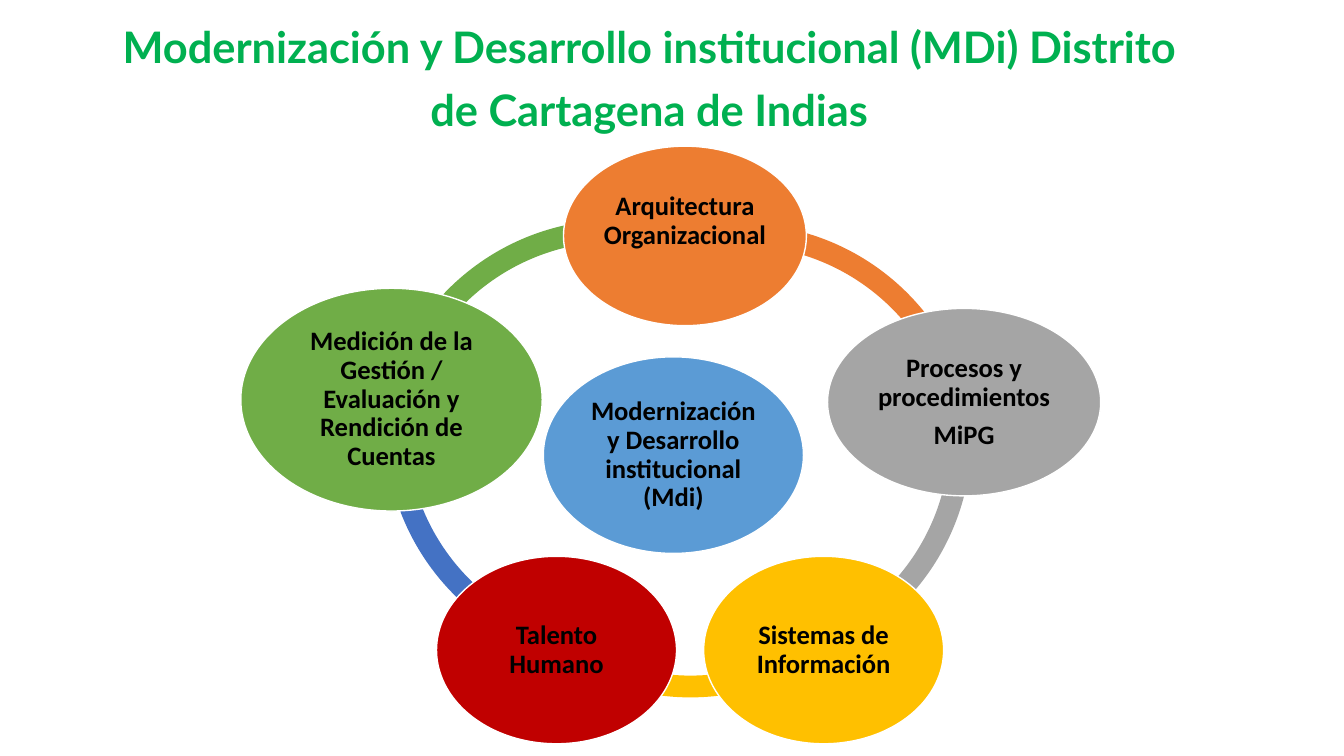
from pptx import Presentation
from pptx.dml.color import RGBColor
from pptx.enum.shapes import MSO_SHAPE
from pptx.enum.text import MSO_ANCHOR, PP_ALIGN
from pptx.util import Pt

WHITE = RGBColor(0xFF, 0xFF, 0xFF)
BLACK = RGBColor(0, 0, 0)
LEAF = RGBColor(0x00, 0xB0, 0x50)
GREEN = RGBColor(0x70, 0xAD, 0x47)
NAVY = RGBColor(0x44, 0x72, 0xC4)
BLUE = RGBColor(0x5B, 0x9B, 0xD5)
GOLD = RGBColor(0xFF, 0xC0, 0x00)
GRAY = RGBColor(0xA5, 0xA5, 0xA5)
ORANGE = RGBColor(0xED, 0x7D, 0x31)
RED = RGBColor(0xC0, 0x00, 0x00)

ARC_SIZE = 338.4
ARC_WIDTH = 0.046
SIZE = 19
LINE = 20.5

# Offset in the ring box, start and end angle (1.0 = 5/3 degree), colour
ARCS = [
    (98.7, 53, 116.59, 172.33, GREEN),
    (103, 32.1, 63.74, 112.19, NAVY),
    (152, 55.8, 32.89, 75.12, GOLD),
    (183.7, 38.6, 210.97, 40.45, GRAY),
    (187.3, 55.8, 153.74, 207.29, ORANGE),
]

# Offset in the ring box, size, colour, text, lift of the text
NODES = [
    (216.1, 150.9, 185.8, 140.4, BLUE,
     "Modernización y Desarrollo institucional (Mdi)", 0),
    (230.5, 0.4, 173.5, 128.2, ORANGE, "Arquitectura Organizacional", LINE),
    (419.1, 116.3, 195.1, 133.9, GRAY, "Procesos y procedimientos\nMiPG", 0),
    (330.6, 293.4, 171.4, 133.9, GOLD, "Sistemas de Información", 0),
    (139.8, 293.4, 171.4, 133.9, RED, "Talento Humano", 0),
    (0, 101.9, 215.3, 159.1, GREEN,
     "Medición de la Gestión / Evaluación y Rendición de Cuentas", 0),
]


def style(frame, font, size, color, spacing, after=0):
    frame.word_wrap = True
    for para in frame.paragraphs:
        para.alignment = PP_ALIGN.CENTER
        para.line_spacing = spacing
        para.space_after = Pt(after)
        for run in para.runs:
            run.font.name = font
            run.font.size = Pt(size)
            run.font.bold = True
            run.font.color.rgb = color


def add_title(slide, left, top, width, height):
    box = slide.shapes.add_textbox(Pt(left), Pt(top), Pt(width), Pt(height))
    frame = box.text_frame
    frame.text = ("Modernización y Desarrollo institucional (MDi) Distrito "
                  "de Cartagena de Indias")
    style(frame, "Lato", 31, LEAF, 1.2)


def add_solid(slide, kind, left, top, width, height, color):
    shape = slide.shapes.add_shape(kind, Pt(left), Pt(top), Pt(width), Pt(height))
    shape.shadow.inherit = False
    shape.fill.solid()
    shape.fill.fore_color.rgb = color
    shape.line.fill.background()
    return shape


def add_node(slide, left, top, width, height, color, text, lift):
    """Draw one oval; lift raises its text by that much room below."""
    oval = add_solid(slide, MSO_SHAPE.OVAL, left, top, width, height, color)
    oval.line.color.rgb = WHITE
    oval.line.width = Pt(1)
    frame = oval.text_frame
    frame.margin_left = frame.margin_right = frame.margin_top = Pt(2)
    frame.margin_bottom = Pt(2 + lift)
    frame.vertical_anchor = MSO_ANCHOR.MIDDLE
    frame.text = text
    style(frame, "Calibri", SIZE, BLACK, 0.9, 0.35 * SIZE)


def add_ring(slide, left, top):
    for x, y, start, end, color in ARCS:
        arc = add_solid(slide, MSO_SHAPE.BLOCK_ARC, left + x, top + y,
                        ARC_SIZE, ARC_SIZE, color)
        for i, value in enumerate((start, end, ARC_WIDTH)):
            arc.adjustments[i] = value
    for x, y, *rest in NODES:
        add_node(slide, left + x, top + y, *rest)


def main():
    deck = Presentation()
    deck.slide_width, deck.slide_height = Pt(960), Pt(540)
    slide = deck.slides.add_slide(deck.slide_layouts[6])
    add_ring(slide, 172, 104)
    add_title(slide, 71.3, 3.6, 784.8, 137.5)
    deck.save("out.pptx")


if __name__ == "__main__":
    main()
